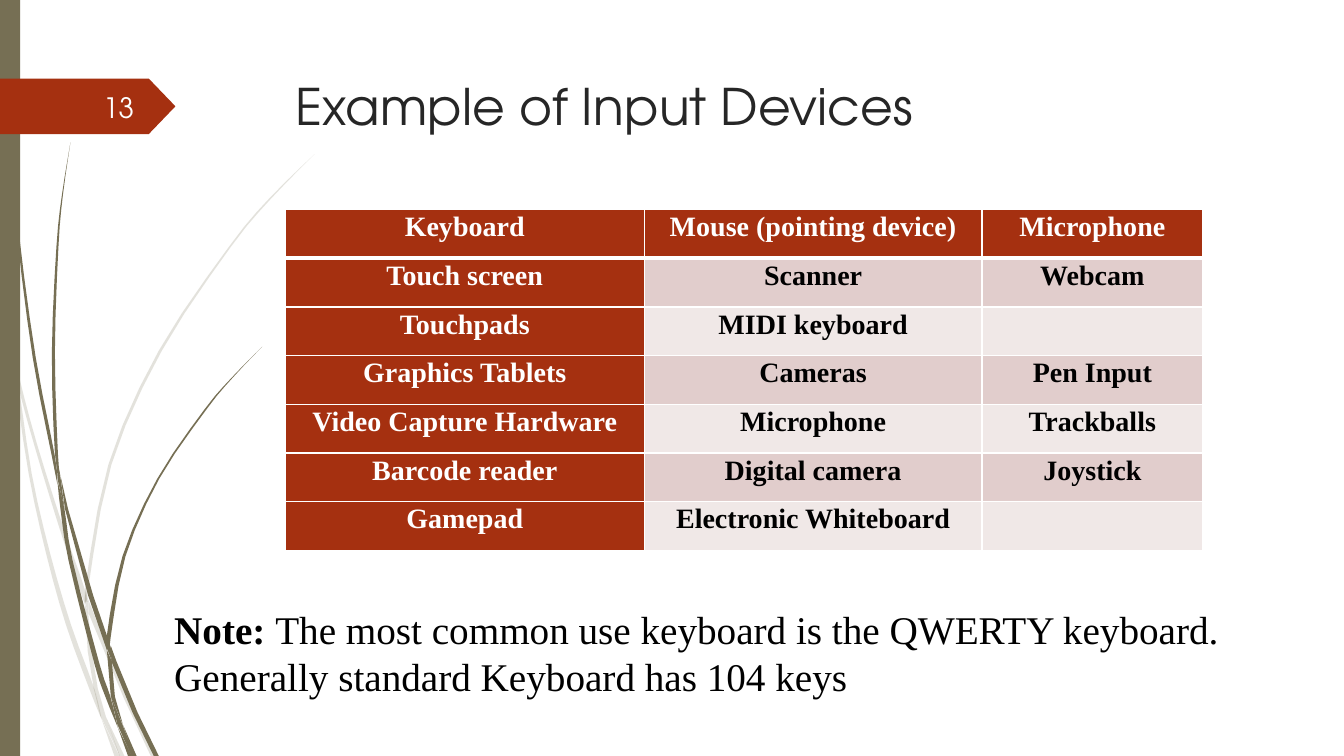
import pptx
import pptx.util
import pptx.dml.color
import pptx.enum.shapes
import pptx.enum.text
import pptx.oxml
import pptx.oxml.ns
import lxml.etree

Inches = pptx.util.Inches
Pt = pptx.util.Pt
ALIGN = pptx.enum.text.PP_ALIGN
ANCHOR = pptx.enum.text.MSO_ANCHOR
SHAPE = pptx.enum.shapes.MSO_SHAPE
qn = pptx.oxml.ns.qn

OLIVE, RUST, WHITE, BLACK = "766F54", "A53010", "FFFFFF", "000000"
BANDS = ["E1CDCC", "F0E8E7"]
HEADING_FONT, BODY_FONT = "TeX Gyre Adventor", "Times New Roman"

# Each knot of a grass blade: y, centre x, width
PALE_BLADES = [
    [(2.82, 0, 0), (3.2, 0.07, 0.03), (3.5, 0.11, 0)],
    [(3.45, 0.14, 0), (3.76, 0.18, 0.03), (4.4, 0.35, 0.03), (5.21, 0.6, 0.04),
     (5.86, 0.82, 0.05), (5.99, 0.84, 0)],
    [(5.96, 0.88, 0), (6.1, 0.91, 0.05), (6.93, 1.25, 0.04), (7.5, 1.52, 0.05)],
    [(7.11, 1.05, 0), (7.5, 1.21, 0.05)],
    [(3.5, 0.11, 0), (3.76, 0.16, 0.03), (4.7, 0.3, 0.03), (5.5, 0.48, 0.04),
     (6.2, 0.68, 0.05), (6.83, 0.91, 0.05), (7.14, 1.01, 0)],
    [(5.99, 0.84, 0), (6.08, 0.86, 0.03), (6.46, 0.89, 0.04),
     (6.83, 0.95, 0.04), (7.11, 1.05, 0)],
    [(1.53, 3.12, 0), (1.97, 2.68, 0.02), (2.45, 2.28, 0.02), (3.48, 1.59, 0.03),
     (4.61, 1.09, 0.03), (5.84, 0.86, 0.03), (5.96, 0.88, 0)],
    [(7.14, 1.01, 0), (7.5, 1.16, 0.05)],
    [(5.86, 0.85, 0), (5.97, 0.86, 0.04), (6.1, 0.88, 0)],
    [(6.83, 0.93, 0), (7.1, 1.02, 0.05), (7.5, 1.19, 0)],
]
DARK_BLADES = [
    [(0, 0.04, 0.01), (1.1, 0.08, 0.01), (2.33, 0.18, 0.02), (3.55, 0.34, 0.03),
     (4.53, 0.53, 0.03), (4.81, 0.57, 0)],
    [(4.72, 0.6, 0), (5.05, 0.66, 0.03), (5.91, 0.9, 0.05), (6.32, 1.04, 0.05),
     (6.45, 1.06, 0)],
    [(6.41, 1.1, 0), (6.56, 1.13, 0.05), (7.07, 1.34, 0.05), (7.5, 1.55, 0.05)],
    [(4.77, 0.57, 0), (5.05, 0.62, 0.04), (5.56, 0.7, 0.04), (6.58, 0.96, 0.05),
     (6.91, 1.07, 0.05), (7.22, 1.17, 0)],
    [(1.41, 0.7, 0), (1.93, 0.62, 0.01), (2.45, 0.57, 0.02), (3.49, 0.53, 0.03),
     (4.5, 0.56, 0.03), (4.72, 0.6, 0)],
    [(7.19, 1.22, 0), (7.5, 1.34, 0.03)],
    [(4.49, 0.55, 0), (4.77, 0.59, 0.03), (5.05, 0.64, 0)],
    [(3.44, 2.6, 0), (3.74, 2.31, 0.01), (4.06, 2.04, 0.02), (4.75, 1.57, 0.02),
     (5.52, 1.23, 0.03), (6.31, 1.08, 0.04), (6.41, 1.1, 0)],
    [(7.22, 1.17, 0), (7.5, 1.29, 0.04)],
    [(6.45, 1.06, 0), (6.56, 1.09, 0.04), (6.91, 1.12, 0.04), (7.19, 1.22, 0)],
    [(6.31, 1.06, 0), (6.43, 1.08, 0.04), (6.56, 1.11, 0)],
    [(6.91, 1.1, 0), (7.19, 1.19, 0.05), (7.5, 1.32, 0.03)],
]
DEVICES = [
    ("Keyboard", "Mouse (pointing device)", "Microphone"),
    ("Touch screen", "Scanner", "Webcam"),
    ("Touchpads", "MIDI keyboard", ""),
    ("Graphics Tablets", "Cameras", "Pen Input"),
    ("Video Capture Hardware", "Microphone", "Trackballs"),
    ("Barcode reader", "Digital camera", "Joystick"),
    ("Gamepad", "Electronic Whiteboard", ""),
]


def color(hex_code):
    return pptx.dml.color.RGBColor.from_string(hex_code)


def paint(sp, hex_code, opacity=100):
    sp.shadow.inherit = False
    sp.fill.solid()
    sp.fill.fore_color.rgb = color(hex_code)
    sp.line.fill.background()
    if opacity < 100:
        clr = sp.fill._xPr.find(qn("a:solidFill"))[0]
        lxml.etree.SubElement(clr, qn("a:alpha"), val=str(opacity * 1000))


def add_run(p, text, font, size, hex_code, bold=False):
    r = p.add_run()
    r.text = text
    r.font.name = font
    r.font.size = Pt(size)
    r.font.bold = bold
    r.font.color.rgb = color(hex_code)


def smooth_knots(knots, steps):
    padded = [knots[0]] + knots + [knots[-1]]
    curve = []
    for a, b, c, d in zip(padded, padded[1:], padded[2:], padded[3:]):
        for i in range(steps):
            t = i / steps
            curve.append([
                (2 * q + (r - p) * t + (2 * p - 5 * q + 4 * r - s) * t ** 2
                 + (3 * q - p - 3 * r + s) * t ** 3) / 2
                for p, q, r, s in zip(a, b, c, d)])
    return curve + [knots[-1]]


def add_blade(s, knots, opacity):
    curve = smooth_knots(knots, 3 if len(knots) > 5 else 1)
    left = [(Inches(max(x - w / 2, 0)), Inches(y)) for y, x, w in curve]
    right = [(Inches(x + w / 2), Inches(y)) for y, x, w in curve]
    builder = s.shapes.build_freeform(*left[0])
    builder.add_line_segments(left[1:] + right[::-1], close=True)
    paint(builder.convert_to_shape(), OLIVE, opacity)


def add_preset(s, kind, x, y, w, h, hex_code):
    sp = s.shapes.add_shape(kind, Inches(x), Inches(y), Inches(w), Inches(h))
    paint(sp, hex_code)
    return sp


def add_text_box(s, x, y, w, h):
    sp = s.shapes.add_textbox(Inches(x), Inches(y), Inches(w), Inches(h))
    tf = sp.text_frame
    tf.word_wrap = True
    tf.vertical_anchor = ANCHOR.MIDDLE
    return tf.paragraphs[0]


def set_title(s, text):
    sp = s.shapes.title
    sp.left, sp.top, sp.width, sp.height = map(Inches, (2.83, 0.69, 9.75, 1.4))
    tf = sp.text_frame
    tf.auto_size = pptx.enum.text.MSO_AUTO_SIZE.NONE
    tf.vertical_anchor = ANCHOR.TOP
    p = tf.paragraphs[0]
    p.alignment = ALIGN.LEFT
    add_run(p, text, HEADING_FONT, 36, "262626")


def set_borders(cell, widths):
    tc_pr = cell._tc.get_or_add_tcPr()
    for side, width in widths.items():
        ln = lxml.etree.SubElement(tc_pr, qn("a:ln" + side), w=str(Pt(width)))
        fill = lxml.etree.SubElement(ln, qn("a:solidFill"))
        lxml.etree.SubElement(fill, qn("a:srgbClr"), val=WHITE)


def fill_cell(cell, text, row, col):
    heading = row == 0 or col == 0
    if row == 0:
        set_borders(cell, {"L": 1, "R": 1, "T": 1, "B": 3})
    else:
        set_borders(cell, {"L": 1, "R": 1, "B": 1})
    cell.fill.solid()
    cell.fill.fore_color.rgb = color(RUST if heading else BANDS[(row - 1) % 2])
    if text:
        cell.margin_left = cell.margin_right = Inches(0.07)
        cell.margin_top = cell.margin_bottom = 0
        p = cell.text_frame.paragraphs[0]
        p.alignment = ALIGN.CENTER
        p.line_spacing = 1.07
        p_pr = p._p.get_or_add_pPr()
        p_pr.set("marL", str(Inches(0.38)))
        p_pr.set("indent", str(Inches(-0.38)))
        add_run(p, text, BODY_FONT, 20, WHITE if heading else BLACK, True)


def add_device_table(s):
    table = s.shapes.add_table(len(DEVICES), 3, Inches(2.83), Inches(2.08),
                               Inches(9.1), Inches(3.38)).table
    for column, width in zip(table.columns, (3.56, 3.35, 2.19)):
        column.width = Inches(width)
    for i, names in enumerate(DEVICES):
        for j, name in enumerate(names):
            fill_cell(table.cell(i, j), name, i, j)


def main():
    prs = pptx.Presentation()
    prs.slide_width, prs.slide_height = Inches(13.33), Inches(7.5)
    s = prs.slides.add_slide(prs.slide_layouts[5])
    for blades, opacity in ((PALE_BLADES, 20), (DARK_BLADES, 100)):
        for knots in blades:
            add_blade(s, knots, opacity)
    add_preset(s, SHAPE.RECTANGLE, 0, 0, 0.2, 7.5, OLIVE)
    tag = add_preset(s, SHAPE.PENTAGON, 0, 0.78, 1.74, 0.55, RUST)
    tag.adjustments[0] = 0.48
    set_title(s, "Example of Input Devices")
    add_device_table(s)
    number = add_text_box(s, 0.58, 0.86, 0.85, 0.4)
    number.alignment = ALIGN.RIGHT
    add_run(number, "13", HEADING_FONT, 20, "FEFFFF")
    note = add_text_box(s, 1.63, 5.95, 10.96, 1.04)
    add_run(note, "Note: ", BODY_FONT, 28, BLACK, True)
    add_run(note, "The most common use keyboard is the QWERTY keyboard. "
            "Generally standard Keyboard has 104 keys", BODY_FONT, 28, BLACK)
    prs.save("out.pptx")


if __name__ == "__main__":
    main()
